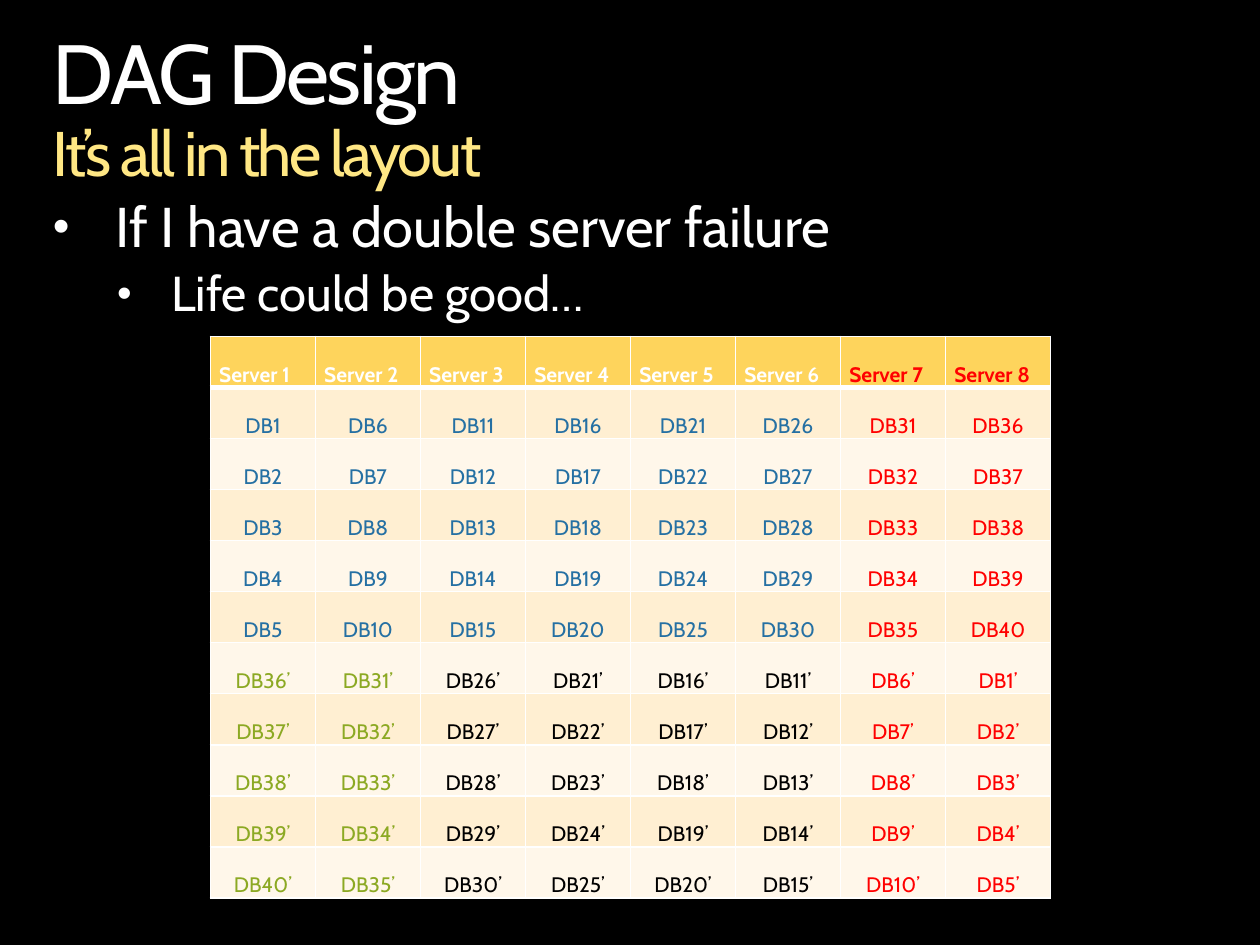
from dataclasses import dataclass
from typing import Any

from lxml.etree import SubElement
from pptx import Presentation
from pptx.dml.color import RGBColor
from pptx.enum.text import MSO_ANCHOR as Anchor, PP_ALIGN as Align
from pptx.oxml.ns import qn
from pptx.util import Inches, Pt

BLACK = RGBColor(0x00, 0x00, 0x00)
WHITE = RGBColor(0xFF, 0xFF, 0xFF)
YELLOW = RGBColor(0xFF, 0xE7, 0x84)
GOLD = RGBColor(0xFE, 0xD4, 0x5C)
CREAM = RGBColor(0xFF, 0xEF, 0xD2)
IVORY = RGBColor(0xFF, 0xF7, 0xEA)
BLUE = RGBColor(0x25, 0x70, 0xA3)
GREEN = RGBColor(0x8C, 0xA9, 0x23)
RED = RGBColor(0xFF, 0x00, 0x00)

FONT = "Cabin"
SERVERS = 8
DBS_PER_SERVER = 5
FAILED_SERVERS = (7, 8)
RECOVERED_SERVERS = (1, 2)

FRAME_FORMAT = dict(word_wrap=True, margin_left=0, margin_top=0,
                    margin_right=0, margin_bottom=0)
CELL_FORMAT = dict(vertical_anchor=Anchor.BOTTOM, margin_left=Inches(0.07),
                   margin_top=0, margin_right=Inches(0.07), margin_bottom=0)


@dataclass
class TitleLine:
    text: str
    size: float
    color: RGBColor


@dataclass
class Bullet:
    text: str
    level: int
    size: float
    margin: float
    hanging: float
    space_before: float


@dataclass
class TableEntry:
    text: str
    color: RGBColor
    fill: RGBColor
    align: Align = Align.CENTER
    bold: bool = False
    top: float = 1
    bottom: float = 1


TITLE = [TitleLine("DAG Design", 48, WHITE),
         TitleLine("It’s all in the layout", 36, YELLOW)]
BULLETS = [Bullet("If I have a double server failure", 0, 32, 0.5, 0.5, 0),
           Bullet("Life could be good…", 1, 28, 0.94, 0.43, 5.6)]


def apply_format(target: Any, values: dict) -> None:
    for attribute, value in values.items():
        setattr(target, attribute, value)


def style_font(font: Any, size: float, color: RGBColor, bold: bool = False) -> None:
    apply_format(font, dict(name=FONT, size=Pt(size), bold=bold))
    font.color.rgb = color


def add_frame(slide: Any, top: float, height: float) -> Any:
    frame = slide.shapes.add_textbox(
        Inches(0.42), Inches(top), Inches(9.17), Inches(height)).text_frame
    apply_format(frame, FRAME_FORMAT)
    return frame


def draw_title(slide: Any, lines: list[TitleLine]) -> None:
    heading = add_frame(slide, 0.25, 1.27).paragraphs[0]
    heading.line_spacing = 0.9
    for index, line in enumerate(lines):
        if index:
            heading.add_line_break()
        run = heading.add_run()
        run.text = line.text
        style_font(run.font, line.size, line.color)
        run._r.get_or_add_rPr().set("spc", "-150")


def draw_bullets(slide: Any, bullets: list[Bullet]) -> None:
    frame = add_frame(slide, 1.58, 1)
    for index, bullet in enumerate(bullets):
        paragraph = frame.add_paragraph() if index else frame.paragraphs[0]
        properties = paragraph._p.get_or_add_pPr()
        properties.set("marL", str(Inches(bullet.margin)))
        properties.set("indent", str(-Inches(bullet.hanging)))
        SubElement(properties, qn("a:buSzPct"), val="85000")
        SubElement(properties, qn("a:buFont"), typeface="Arial")
        SubElement(properties, qn("a:buChar"), char="•")
        apply_format(paragraph, dict(level=bullet.level, line_spacing=0.9,
                                     space_before=Pt(bullet.space_before)))
        run = paragraph.add_run()
        run.text = bullet.text
        style_font(run.font, bullet.size, WHITE)


def add_borders(cell: Any, entry: TableEntry) -> None:
    properties = cell._tc.get_or_add_tcPr()
    for side, width in dict(L=1, R=1, T=entry.top, B=entry.bottom).items():
        line = SubElement(properties, qn(f"a:ln{side}"), w=str(Pt(width)))
        solid = SubElement(line, qn("a:solidFill"))
        SubElement(solid, qn("a:srgbClr"), val=str(WHITE))


def draw_cell(cell: Any, entry: TableEntry) -> None:
    apply_format(cell, CELL_FORMAT)
    add_borders(cell, entry)
    cell.fill.solid()
    cell.fill.fore_color.rgb = entry.fill
    paragraph = cell.text_frame.paragraphs[0]
    paragraph.alignment = entry.align
    run = paragraph.add_run()
    run.text = entry.text
    style_font(run.font, 12, entry.color, entry.bold)


def server_entry(row: int, server: int) -> TableEntry:
    failed = server in FAILED_SERVERS
    if row == 0:
        return TableEntry(f"Server {server}", RED if failed else WHITE, GOLD,
                          Align.LEFT, bold=True, bottom=3)
    fill = CREAM if row % 2 else IVORY
    if row <= DBS_PER_SERVER:
        database = (server - 1) * DBS_PER_SERVER + row
        return TableEntry(f"DB{database}", RED if failed else BLUE, fill,
                          top=3 if row == 1 else 1)
    database = (SERVERS - server) * DBS_PER_SERVER + row - DBS_PER_SERVER
    healthy = GREEN if server in RECOVERED_SERVERS else BLACK
    return TableEntry(f"DB{database}’", RED if failed else healthy, fill)


def draw_layout_table(slide: Any) -> None:
    rows = 1 + 2 * DBS_PER_SERVER
    layout = slide.shapes.add_table(
        rows, SERVERS, Inches(1.67), Inches(2.67), Inches(6.67), Inches(4.46)).table
    layout.horz_banding = False
    for row in range(rows):
        for column in range(SERVERS):
            draw_cell(layout.cell(row, column), server_entry(row, column + 1))


def main() -> None:
    deck = Presentation()
    apply_format(deck, dict(slide_width=Inches(10), slide_height=Inches(7.5)))
    slide = deck.slides.add_slide(deck.slide_layouts[6])
    slide.background.fill.solid()
    slide.background.fill.fore_color.rgb = BLACK
    draw_title(slide, TITLE)
    draw_bullets(slide, BULLETS)
    draw_layout_table(slide)
    deck.save("out.pptx")


if __name__ == "__main__":
    main()
